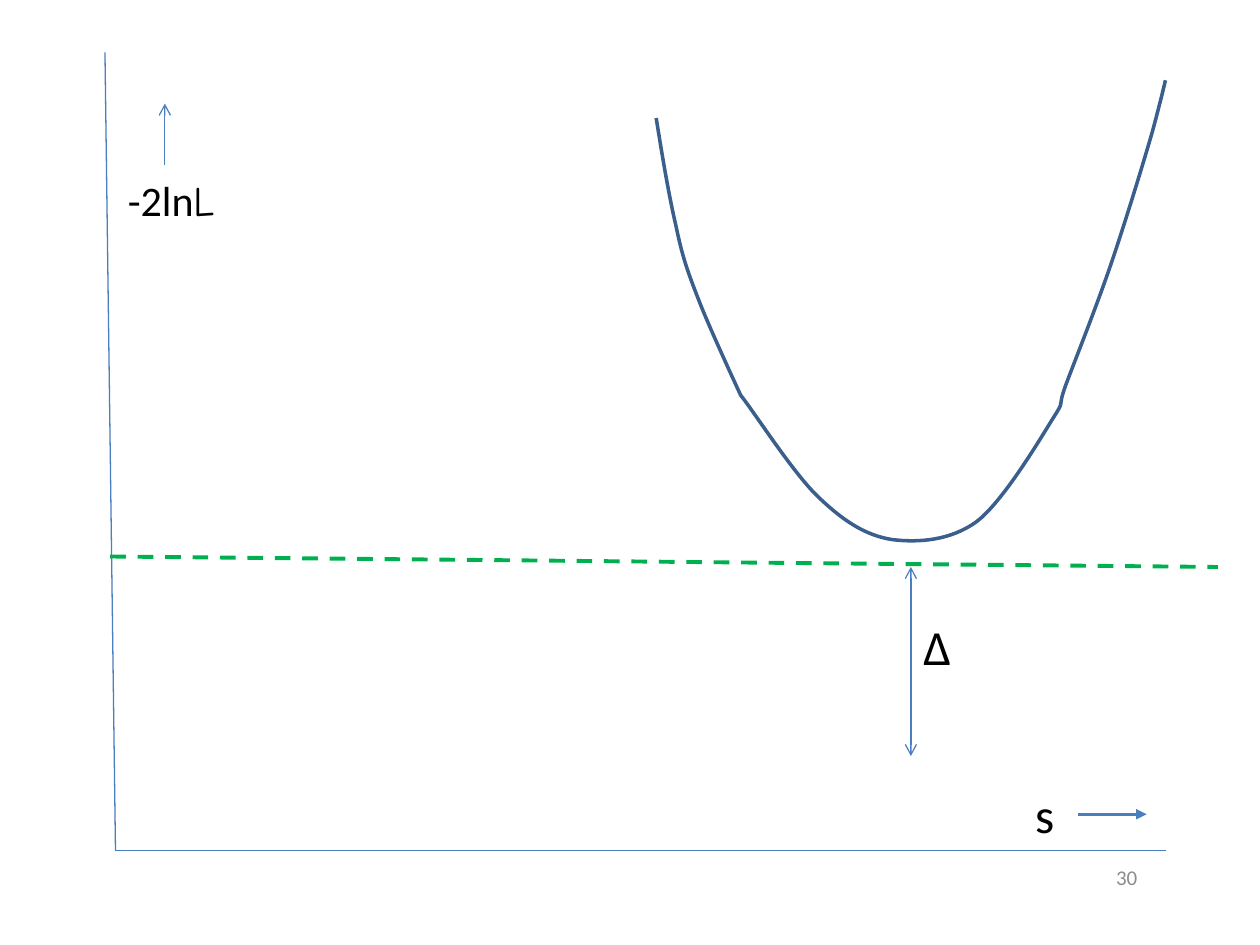
"""Draw a likelihood parabola with its axes, minimum line and offset."""
from lxml import etree
from pptx import Presentation, util as u
from pptx.dml.color import RGBColor
from pptx.enum import dml, shapes, text
from pptx.oxml.ns import qn

COLUMNS, ROWS = 120, 90
WIDTH, HEIGHT = u.Inches(10), u.Inches(7.5)
BLUE, DARK_BLUE, GREEN, GRAY, BLACK = "4B7EBC", "3A5F8C", "00B050", "8C8C8C", "000000"

CURVE_START = (62.5, 11.25)
CURVE_SEGMENTS = [
    ((63.1, 15), (63.7, 18.6), (64.4, 21.6)),
    ((65, 24.5), (65.5, 25.9), (66.6, 28.7)),
    ((67.6, 31.3), (70.55, 37.65), (70.55, 37.65)),
    ((71.8, 39.2), (75.5, 45), (77.9, 47.3)),
    ((80.3, 49.6), (82.4, 51), (85, 51.4)),
    ((87.5, 51.7), (90.5, 51.5), (93, 49.7)),
    ((95.5, 47.8), (98.9, 42.1), (100.2, 40)),
    ((101.6, 37.8), (100.6, 39.2), (101.5, 36.7)),
    ((102.4, 34.3), (104.4, 29.3), (105.8, 25.2)),
    ((107.2, 21.1), (109, 15.2), (109.8, 12.4)),
    ((110.6, 9.4), (111, 7.65), (111, 7.65)),
]


def grid(column, row):
    """Turn grid columns and rows into slide lengths."""
    return round(WIDTH * column / COLUMNS), round(HEIGHT * row / ROWS)


def color(value):
    """Turn a hex string into a colour."""
    return RGBColor.from_string(value)


def add_line(page, start, end, width=0.75, stroke=BLUE, dash=None, head=None, tail=None):
    """Draw a straight line with optional dashes and arrowheads."""
    line = page.shapes.add_connector(
        shapes.MSO_CONNECTOR.STRAIGHT, *grid(*start), *grid(*end))
    line.line.width = u.Pt(width)
    line.line.color.rgb = color(stroke)
    if dash:
        line.line.dash_style = dash
    outline = line.line._get_or_add_ln()
    for tag, kind in (("a:headEnd", head), ("a:tailEnd", tail)):
        if kind:
            etree.SubElement(outline, qn(tag), type=kind)
    etree.SubElement(line._element.spPr, qn("a:effectLst"))


def add_label(page, place, size, runs, points, fill=BLACK):
    """Add a text box of (wording, font) runs that grows with its text."""
    box = page.shapes.add_textbox(*grid(*place), *grid(*size))
    frame = box.text_frame
    frame.word_wrap = True
    frame.auto_size = text.MSO_AUTO_SIZE.SHAPE_TO_FIT_TEXT
    para = frame.paragraphs[0]
    para.font.size = u.Pt(points)
    para.font.color.rgb = color(fill)
    for wording, font in runs:
        span = para.add_run()
        span.text = wording
        span.font.name = font
    return frame


def add_page_number(page, number):
    """Add the right-aligned page number."""
    frame = add_label(page, (81.5, 81.1), (28, 4.8), [(number, "Calibri")], 12, GRAY)
    frame.auto_size = text.MSO_AUTO_SIZE.NONE
    frame.vertical_anchor = text.MSO_ANCHOR.MIDDLE
    frame.paragraphs[0].alignment = text.PP_ALIGN.RIGHT


def add_curve(page, start, segments):
    """Draw an open, unfilled chain of cubic curves."""
    builder = page.shapes.build_freeform(*grid(*start))
    builder.add_line_segments([grid(*segment[-1]) for segment in segments], close=False)
    curve = builder.convert_to_shape()
    straights = list(curve._element.iter(qn("a:lnTo")))
    for straight, segment in zip(straights, segments):
        bend = etree.Element(qn("a:cubicBezTo"))
        for point in segment:
            x, y = grid(*point)
            etree.SubElement(bend, qn("a:pt"), x=str(x - curve.left), y=str(y - curve.top))
        straight.getparent().replace(straight, bend)
    curve.shadow.inherit = False
    curve.fill.background()
    curve.line.color.rgb = color(DARK_BLUE)
    curve.line.width = u.Pt(2)


def main():
    """Build and save the slide."""
    deck = Presentation()
    deck.slide_width, deck.slide_height = WIDTH, HEIGHT
    page = deck.slides.add_slide(deck.slide_layouts[6])
    add_page_number(page, "30")
    origin = (11, 81)
    add_line(page, (10, 5), origin)
    add_line(page, origin, (111, 81))
    add_curve(page, CURVE_START, CURVE_SEGMENTS)
    add_label(page, (97.4, 74.13), (13, 6.87), [("s", "Calibri")], 28)
    add_label(page, (11, 16), (13, 6), [("-2ln", "Calibri"), ("L", "Comic Neue")], 24)
    add_line(page, (15.7, 15.7), (15.7, 9.87), tail="arrow")
    add_line(page, (102.7, 77.55), (109.2, 77.55), 1.5, tail="triangle")
    add_line(page, (10.5, 53), (116, 54), 2.25, GREEN, dml.MSO_LINE.DASH)
    add_line(page, (86.75, 54), (86.75, 72), head="arrow", tail="arrow")
    add_label(page, (86.75, 58.15), (5.9, 6.87), [("∆", "Calibri")], 28)
    deck.save("out.pptx")


if __name__ == "__main__":
    main()
